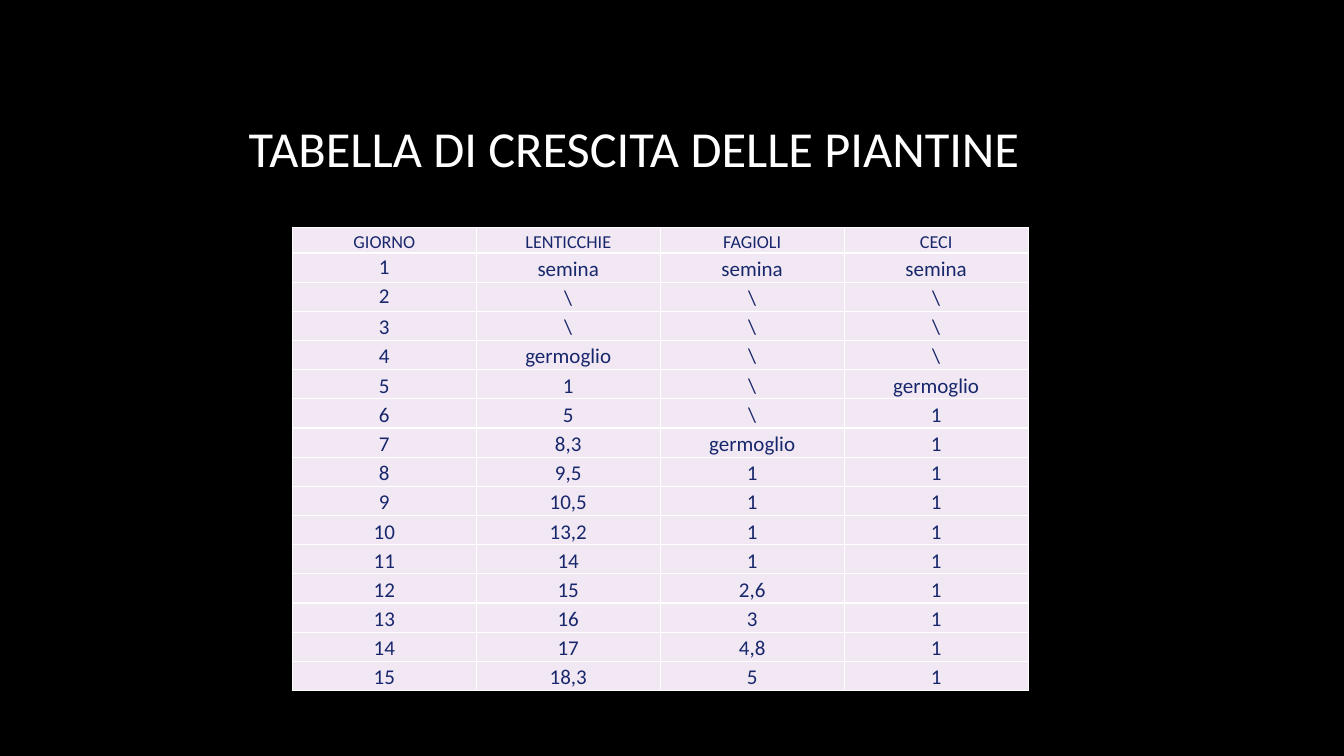
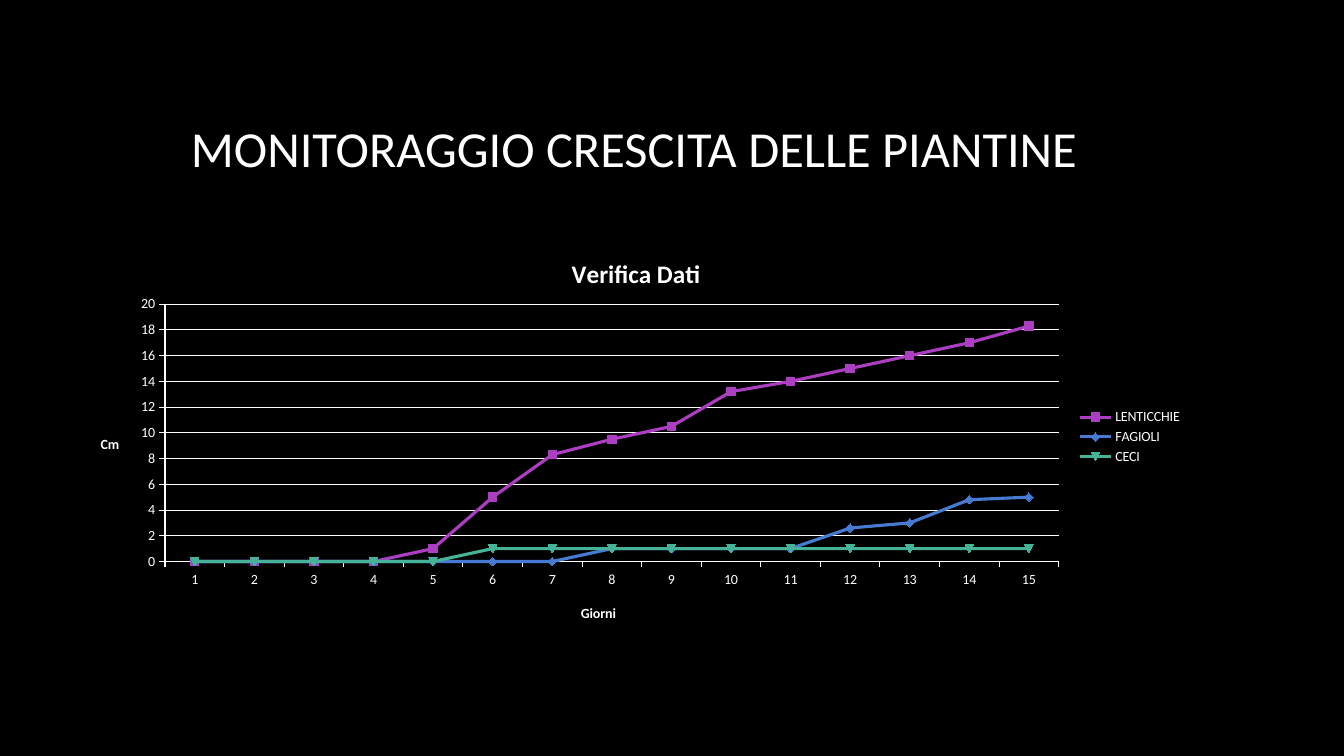
from dataclasses import dataclass

from lxml import etree
from pptx import Presentation
from pptx.chart.data import CategoryChartData
from pptx.dml.color import RGBColor
from pptx.enum.chart import XL_CHART_TYPE, XL_LEGEND_POSITION, XL_TICK_MARK
from pptx.enum.text import MSO_ANCHOR, PP_ALIGN
from pptx.oxml.ns import qn
from pptx.util import Inches, Pt

LINE = XL_CHART_TYPE.LINE_MARKERS
RIGHT = XL_LEGEND_POSITION.RIGHT
OUT = XL_TICK_MARK.OUTSIDE
TOP, MIDDLE, BOTTOM = MSO_ANCHOR.TOP, MSO_ANCHOR.MIDDLE, MSO_ANCHOR.BOTTOM
CENTER = PP_ALIGN.CENTER

COLS, ROWS = 64, 36
DAYS = [str(day) for day in range(1, 16)]
GROWTH = {
    "LENTICCHIE": r"semina \ \ germoglio 1 5 8,3 9,5 10,5 13,2 14 15 16 17 18,3".split(),
    "FAGIOLI": r"semina \ \ \ \ \ germoglio 1 1 1 1 2,6 3 4,8 5".split(),
    "CECI": r"semina \ \ \ germoglio 1 1 1 1 1 1 1 1 1 1".split(),
}


@dataclass(frozen=True)
class Theme:
    font: str = "Calibri"
    back: str = "000000"
    light: str = "FFFFFF"
    ink: str = "18276C"
    cell: str = "F1E8F4"
    hues: tuple = ("AC3EC1", "477BD1", "46B298")
    title: int = 36
    head: int = 13
    body: int = 15
    chart: int = 18
    label: int = 10


def style(item, values):
    for name, value in values.items():
        setattr(item, name, value)


def paint(fill, hue):
    fill.solid()
    fill.fore_color.rgb = RGBColor.from_string(hue)


def amount(text):
    return float(text.replace(",", ".")) if text[0].isdigit() else 0


def place(node, sizes, inner=False):
    old = node.find(qn("c:layout"))
    if old is not None:
        node.remove(old)
    layout = etree.Element(qn("c:layout"))
    manual = etree.SubElement(layout, qn("c:manualLayout"))
    marks = {"layoutTarget": "inner"} if inner else {}
    marks.update(xMode="edge", yMode="edge", **sizes)
    for name, value in marks.items():
        etree.SubElement(manual, qn("c:" + name)).set("val", str(value))
    node.insert(0 if node.find(qn("c:tx")) is None else 1, layout)


class Deck:
    """Holds the theme and the current slide, and draws each kind of element."""

    def __init__(self, theme):
        self.theme = theme
        self.file = Presentation()
        style(self.file, {"slide_width": Inches(13.33), "slide_height": Inches(7.5)})
        self.slide = None

    def wide(self, cols):
        return round(self.file.slide_width * cols / COLS)

    def high(self, rows):
        return round(self.file.slide_height * rows / ROWS)

    def box(self, x, y, w, h):
        return self.wide(x), self.high(y), self.wide(w), self.high(h)

    def ink(self, font, size, hue, bold=False):
        style(font, {"name": self.theme.font, "size": Pt(size), "bold": bold})
        font.color.rgb = RGBColor.from_string(hue)

    def text(self, frame, words, size, hue, bold=False):
        para = frame.paragraphs[0]
        para.alignment = CENTER
        run = para.add_run()
        run.text = words
        self.ink(run.font, size, hue, bold)

    def page(self, title):
        self.slide = self.file.slides.add_slide(self.file.slide_layouts[6])
        paint(self.slide.background.fill, self.theme.back)
        frame = self.slide.shapes.add_textbox(*self.box(3.6, 3.2, 53.2, 7.63)).text_frame
        style(frame, {"word_wrap": True, "vertical_anchor": MIDDLE})
        self.text(frame, title, self.theme.title, self.theme.light)

    def edge(self, cell):
        props = cell._tc.get_or_add_tcPr()
        for spot, side in enumerate(("lnL", "lnR", "lnT", "lnB")):
            line = etree.Element(qn("a:" + side), w=str(Pt(1)))
            fill = etree.SubElement(line, qn("a:solidFill"))
            etree.SubElement(fill, qn("a:srgbClr"), val=self.theme.light)
            props.insert(spot, line)

    def table(self, x, y, widths, heights, rows):
        spot = self.box(x, y, sum(widths), sum(heights))
        grid = self.slide.shapes.add_table(len(rows), len(widths), *spot).table
        for col, width in zip(grid.columns, widths):
            col.width = self.wide(width)
        for row, height in zip(grid.rows, heights):
            row.height = self.high(height)
        pad = Inches(0.01)
        form = {"margin_left": pad, "margin_right": pad, "margin_top": pad, "margin_bottom": 0}
        for r, line in enumerate(rows):
            for c, words in enumerate(line):
                cell = grid.cell(r, c)
                anchor = TOP if c == 0 and r in (1, 2) else BOTTOM
                style(cell, {**form, "vertical_anchor": anchor})
                paint(cell.fill, self.theme.cell)
                self.edge(cell)
                size = self.theme.body if r else self.theme.head
                self.text(cell.text_frame, words, size, self.theme.ink)

    def label(self, title, words, size, x, y):
        self.text(title.text_frame, words, size, self.theme.light, True)
        place(title.element, {"x": x, "y": y})

    def axis(self, axis, words, x, y):
        style(axis, {"major_tick_mark": OUT, "has_title": True})
        self.stroke(axis.format.line, self.theme.light, 0.75)
        self.label(axis.axis_title, words, self.theme.label, x, y)

    def stroke(self, line, hue, width):
        paint(line.fill, hue)
        line.width = Pt(width)

    def chart(self, spot, title, names, series):
        data = CategoryChartData()
        data.categories = names
        for name, values in series.items():
            data.add_series(name, values)
        chart = self.slide.shapes.add_chart(LINE, *self.box(*spot), data).chart
        self.ink(chart.font, self.theme.label, self.theme.light)
        style(chart, {"has_title": True, "has_legend": True})
        style(chart.legend, {"position": RIGHT, "include_in_layout": False})
        self.label(chart.chart_title, title, self.theme.chart, 0.44, 0.04)
        self.axis(chart.category_axis, "Giorni", 0.45, 0.91)
        self.axis(chart.value_axis, "Cm", 0.02, 0.49)
        body = chart.value_axis.axis_title.element.find(".//" + qn("a:bodyPr"))
        body.set("rot", "0")
        style(chart.value_axis, {
            "minimum_scale": 0, "maximum_scale": 20, "major_unit": 2,
            "has_major_gridlines": True,
        })
        self.stroke(chart.value_axis.major_gridlines.format.line, self.theme.light, 0.75)
        plot = chart.plots[0]
        plot.vary_by_categories = False
        for line, hue in zip(plot.series, self.theme.hues):
            line.smooth = False
            self.stroke(line.format.line, hue, 2.25)
            line.marker.size = 6
            paint(line.marker.format.fill, hue)
            self.stroke(line.marker.format.line, hue, 0.75)
        area = chart.element.find(".//" + qn("c:plotArea"))
        place(area, {"x": 0.08, "y": 0.17, "w": 0.8, "h": 0.64}, True)


def main():
    deck = Deck(Theme())
    deck.page("TABELLA DI CRESCITA DELLE PIANTINE")
    rows = [("GIORNO", *GROWTH), *zip(DAYS, *GROWTH.values())]
    deck.table(13.92, 10.85, [8.76] * 4, [1.2] + [1.39] * len(DAYS), rows)
    deck.page("MONITORAGGIO CRESCITA DELLE PIANTINE")
    series = {name: [amount(item) for item in items] for name, items in GROWTH.items()}
    deck.chart((3.6, 11.23, 53.2, 19.15), "Verifica Dati", DAYS, series)
    deck.file.save("out.pptx")


if __name__ == "__main__":
    main()
